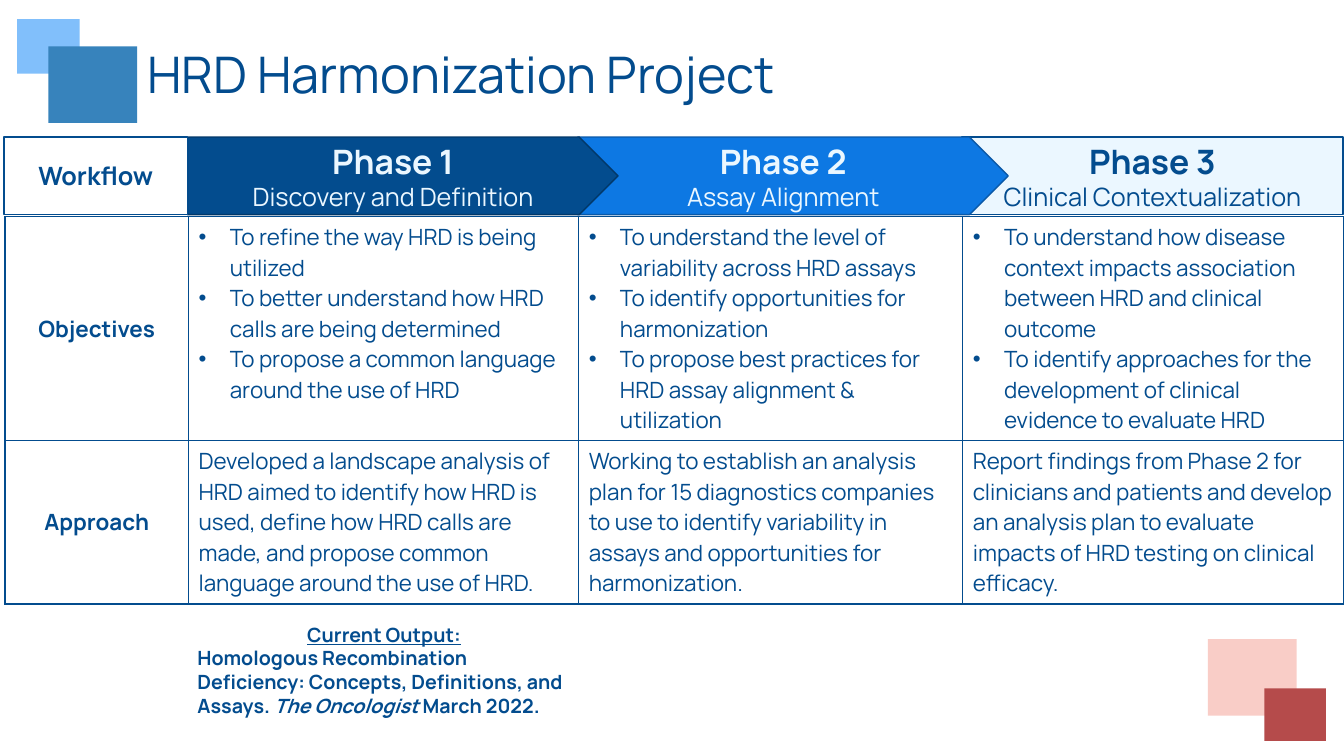
from dataclasses import dataclass

from lxml import etree
from pptx import Presentation
from pptx import util as u
from pptx.dml import color
from pptx.enum import shapes, text
from pptx.oxml import ns


@dataclass(frozen=True)
class Theme:
    font: str = "Manrope"
    navy: str = "034C8E"
    deep: str = "023869"
    blue: str = "0D78E3"
    edge: str = "0A59A8"
    pale: str = "EBF7FF"
    white: str = "FFFFFF"
    sky: str = "81BFFB"
    steel: str = "3783BC"
    pink: str = "F9CDC7"
    red: str = "B54B4B"
    title: int = 36
    phase: int = 24
    label: int = 18
    body: int = 16
    note: int = 14


THEME = Theme()
CENTER = text.PP_ALIGN.CENTER
LEFT = text.PP_ALIGN.LEFT
MIDDLE = text.MSO_ANCHOR.MIDDLE
COLS = [1.82, 3.87, 3.81, 3.78]
ROWS = [2.22, 1.62]
TIP = 0.385

PHASES = [
    ("Phase 1", "Discovery and Definition", THEME.navy, THEME.deep, THEME.pale),
    ("Phase 2", "Assay Alignment", THEME.blue, THEME.edge, THEME.pale),
    ("Phase 3", "Clinical Contextualization", THEME.pale, THEME.navy, THEME.navy),
]
GOALS = [
    ["To refine the way HRD is being utilized",
     "To better understand how HRD calls are being determined",
     "To propose a common language around the use of HRD"],
    ["To understand the level of variability across HRD assays",
     "To identify opportunities for harmonization",
     "To propose best practices for HRD assay alignment & utilization"],
    ["To understand how disease context impacts association between HRD and clinical outcome",
     "To identify approaches for the development of clinical evidence to evaluate HRD"],
]
PLANS = [
    ["Developed a landscape analysis of HRD aimed to identify how HRD is used, define how HRD calls are made, and propose common language around the use of HRD."],
    ["Working to establish an analysis plan for 15 diagnostics companies to use to identify variability in assays and opportunities for harmonization."],
    ["Report findings from Phase 2 for clinicians and patients and develop an analysis plan to evaluate impacts of HRD testing on clinical efficacy."],
]


def inch(box):
    return [u.Inches(n) for n in box]


def rgb(tone):
    return color.RGBColor.from_string(tone)


def style(para, size, tone=THEME.navy, bold=False, align=LEFT):
    para.alignment = align
    font = para.font
    font.name, font.size, font.bold = THEME.font, u.Pt(size), bold
    font.color.rgb = rgb(tone)


def fill_text(frame, lines):
    for i, (words, size, tone, bold, align) in enumerate(lines):
        para = frame.paragraphs[0] if i == 0 else frame.add_paragraph()
        para.text = words
        style(para, size, tone, bold, align)


def block(slide, kind, box, fill, line=None):
    shape = slide.shapes.add_shape(kind, *inch(box))
    shape.shadow.inherit = False
    shape.fill.solid()
    shape.fill.fore_color.rgb = rgb(fill)
    if line:
        shape.line.color.rgb = rgb(line)
        shape.line.width = u.Pt(1)
    else:
        shape.line.fill.background()
    return shape


def squares(slide, box, parts):
    left, top = box
    for x, y, wide, high, fill in parts:
        block(slide, shapes.MSO_SHAPE.RECTANGLE, (left + x, top + y, wide, high), fill)


def heading(slide, box):
    title = slide.shapes.title
    title.left, title.top, title.width, title.height = inch(box)
    frame = title.text_frame
    frame.word_wrap = True
    frame.vertical_anchor = MIDDLE
    fill_text(frame, [("HRD Harmonization Project", THEME.title, THEME.navy, False, LEFT)])
    frame.paragraphs[0].line_spacing = 0.9


def arrow(slide, box, tip, fill, line, lines):
    shape = block(slide, shapes.MSO_SHAPE.PENTAGON, box, fill, line)
    shape.adjustments[0] = tip / box[3]
    frame = shape.text_frame
    frame.word_wrap = True
    frame.vertical_anchor = MIDDLE
    fill_text(frame, lines)


def header(slide, box):
    left, top, high = box
    last = len(PHASES) - 1
    for i in range(last, -1, -1):
        name, topic, fill, line, ink = PHASES[i]
        tip = 0 if i == last else TIP
        wide = COLS[i + 1] if i == last else 4.27
        arrow(slide, (left + sum(COLS[:i + 1]), top, wide, high), tip, fill, line,
              [(name, THEME.phase, ink, True, CENTER),
               (topic, THEME.label, ink, False, CENTER)])
    arrow(slide, (left, top, COLS[0], high), 0, THEME.white, THEME.navy,
          [("Workflow", THEME.label, THEME.navy, True, CENTER)])


def border(cell):
    props = cell._tc.get_or_add_tcPr()
    for i, side in enumerate(("lnL", "lnR", "lnT", "lnB")):
        line = etree.Element(ns.qn("a:" + side), w=str(u.Pt(1)))
        solid = etree.SubElement(line, ns.qn("a:solidFill"))
        etree.SubElement(solid, ns.qn("a:srgbClr"), val=THEME.navy)
        props.insert(i, line)


def bullet(para):
    props = para._p.get_or_add_pPr()
    props.set("marL", str(u.Inches(0.31)))
    props.set("indent", str(u.Inches(-0.31)))
    etree.SubElement(props, ns.qn("a:buFont"), typeface="Arial")
    etree.SubElement(props, ns.qn("a:buChar"), char="•")


def grid(slide, box):
    frame = slide.shapes.add_table(len(ROWS), len(COLS), *inch((*box, sum(COLS), sum(ROWS))))
    table = frame.table
    table.first_row = table.horz_banding = False
    for col, wide in zip(table.columns, COLS):
        col.width = u.Inches(wide)
    for row, high in zip(table.rows, ROWS):
        row.height = u.Inches(high)
    for r, (name, items) in enumerate((("Objectives", GOALS), ("Approach", PLANS))):
        for c, words in enumerate([[name], *items]):
            cell = table.cell(r, c)
            cell.fill.solid()
            cell.fill.fore_color.rgb = rgb(THEME.white)
            border(cell)
            head = c == 0
            if head:
                cell.vertical_anchor = MIDDLE
            fill_text(cell.text_frame, [
                (line, THEME.body, THEME.navy, head, CENTER if head else LEFT)
                for line in words])
            if items is GOALS and not head:
                for para in cell.text_frame.paragraphs:
                    bullet(para)


def output(slide, box):
    frame = slide.shapes.add_textbox(*inch(box)).text_frame
    frame.word_wrap = True
    fill_text(frame, [("Current Output:", THEME.note, THEME.navy, True, CENTER),
                      ("", THEME.note, THEME.navy, True, LEFT)])
    first, cite = frame.paragraphs
    first.font.underline = True
    first.runs[0].font.underline = True
    for words, slant in (
            ("Homologous Recombination Deficiency: Concepts, Definitions, and Assays. ", False),
            ("The Oncologist ", True), ("March 2022.", False)):
        run = cite.add_run()
        run.text = words
        run.font.italic = slant


def main():
    deck = Presentation()
    deck.slide_width, deck.slide_height = inch((13.33, 7.5))
    slide = deck.slides.add_slide(deck.slide_layouts[5])
    squares(slide, (0.17, 0.19), [(0, 0, 0.62, 0.54, THEME.sky),
                                  (0.31, 0.27, 0.88, 0.76, THEME.steel)])
    squares(slide, (11.98, 6.34), [(0, 0, 0.88, 0.76, THEME.pink),
                                   (0.56, 0.49, 0.61, 0.52, THEME.red)])
    heading(slide, (1.36, 0.34, 11.05, 0.86))
    grid(slide, (0.05, 2.15))
    header(slide, (0.04, 1.36, 0.77))
    output(slide, (1.86, 6.13, 3.9, 1.28))
    deck.save("out.pptx")


if __name__ == "__main__":
    main()
